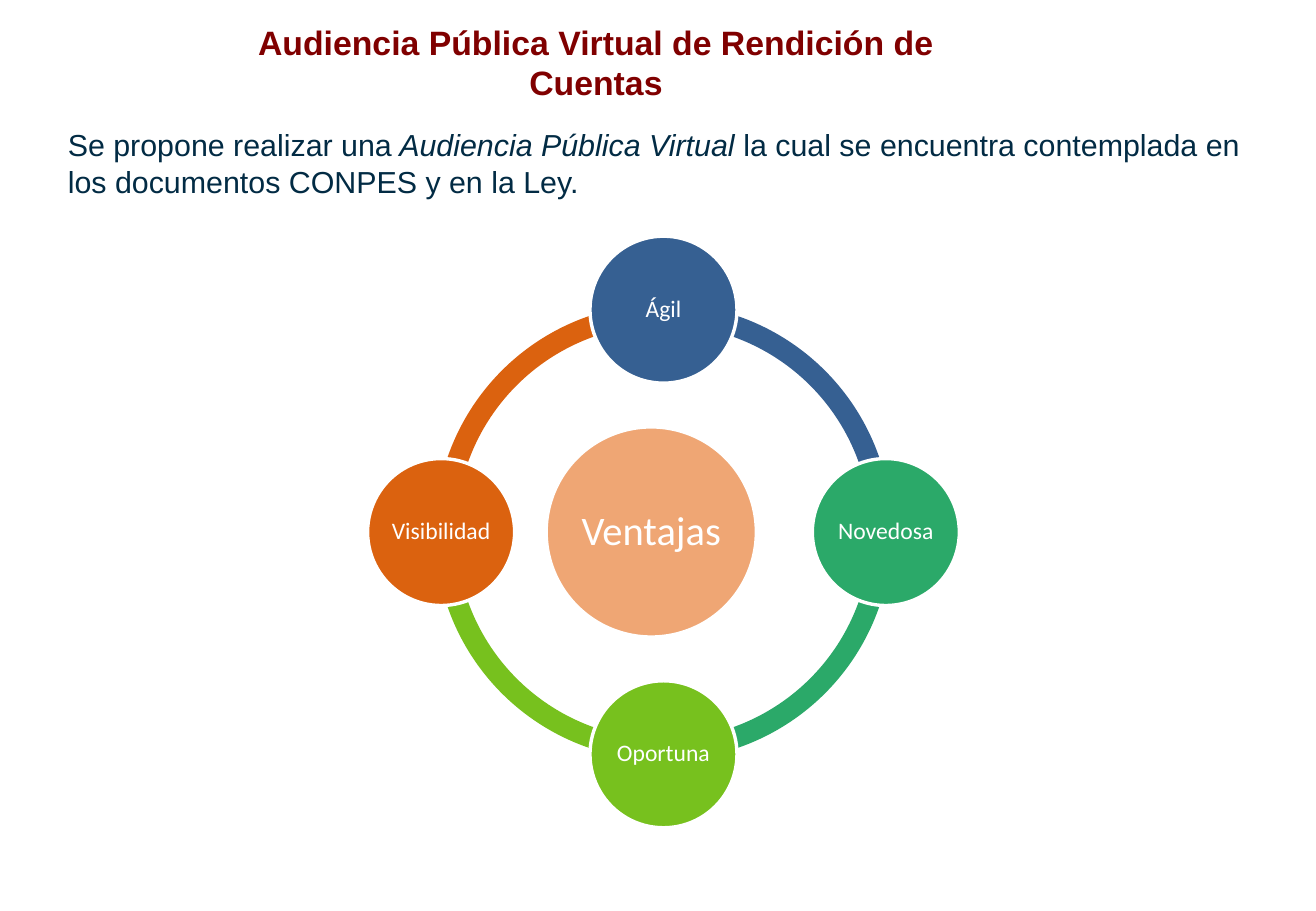
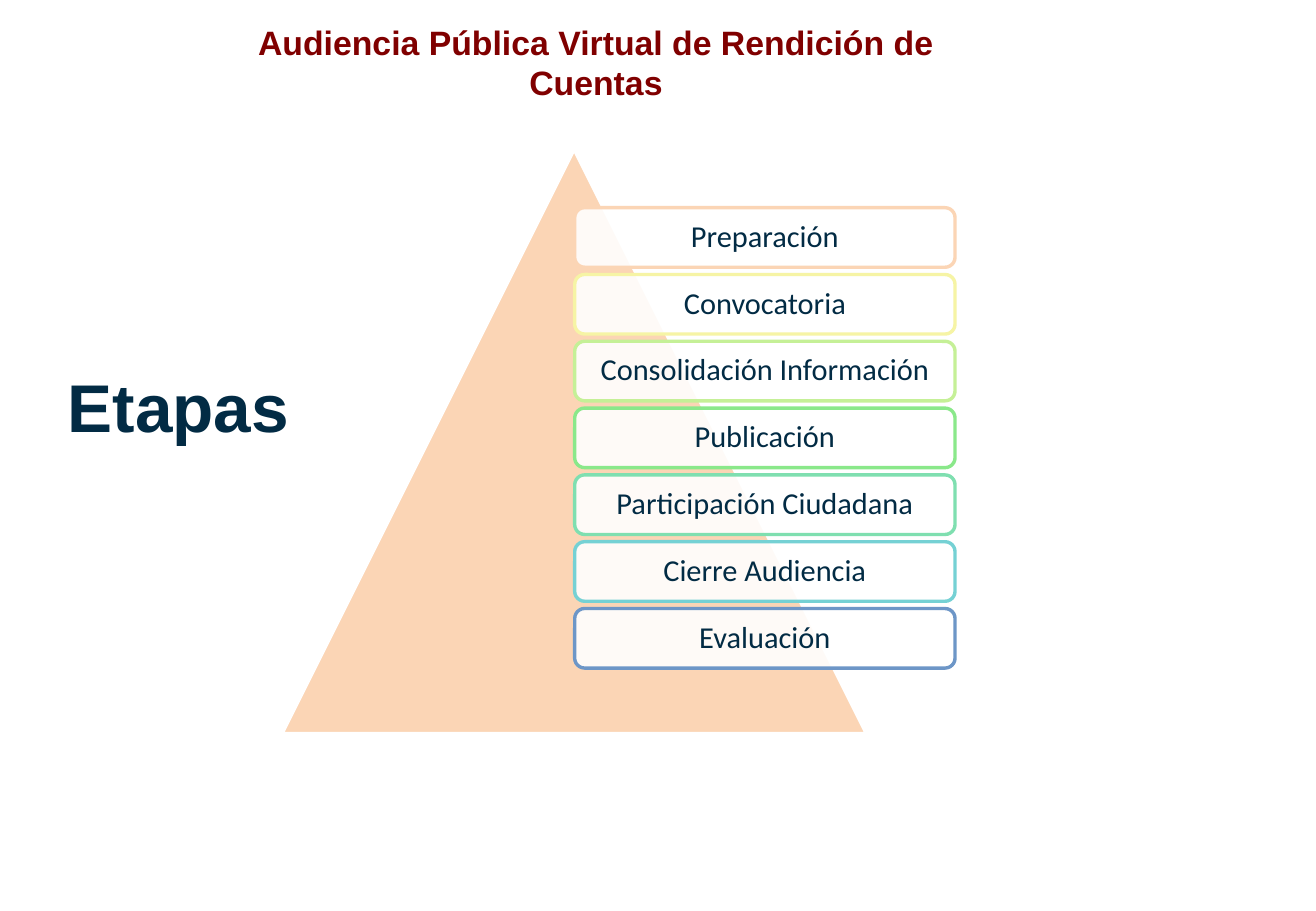
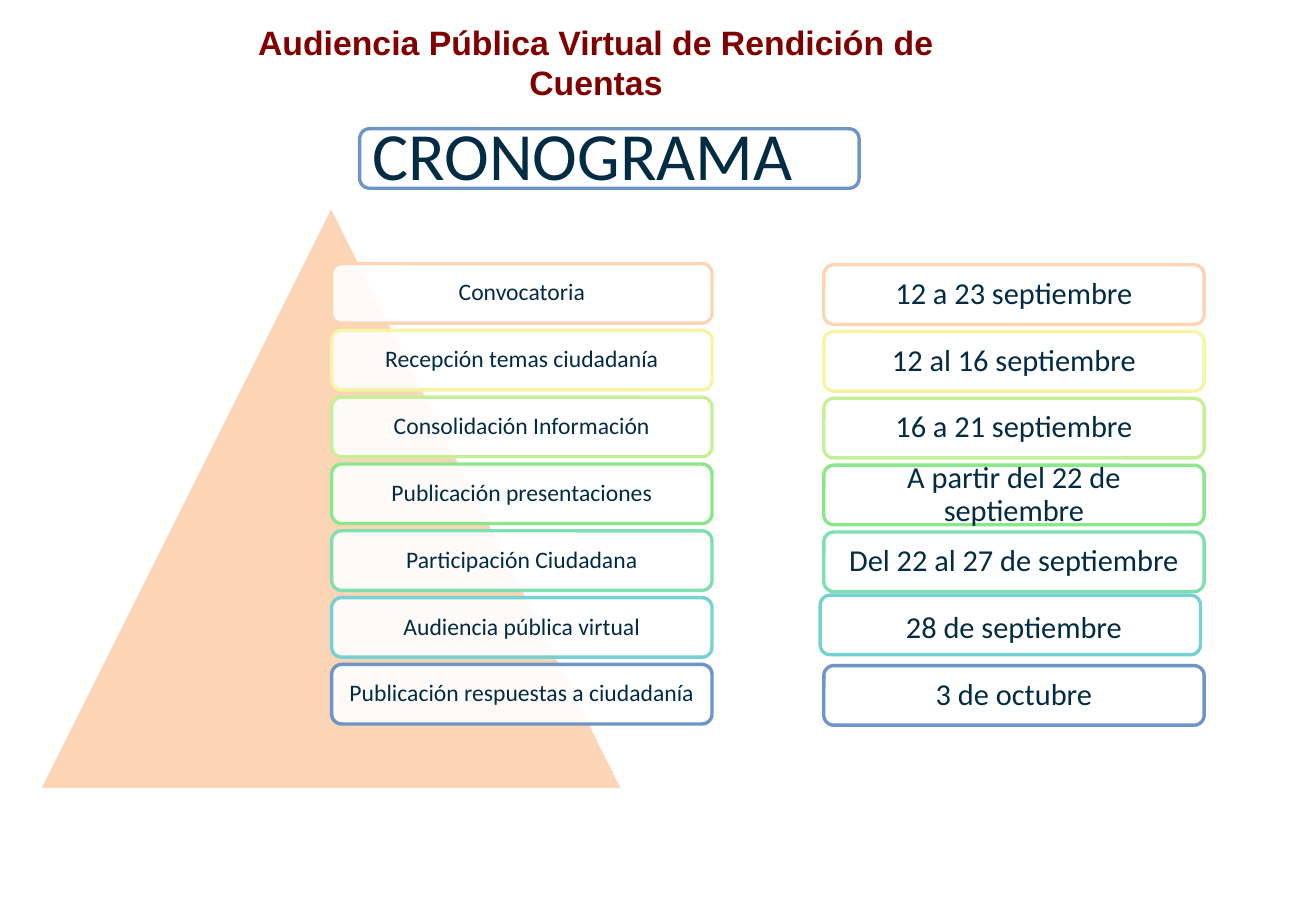
from math import cos, radians, sin

from lxml.etree import SubElement
from pptx import Presentation
from pptx.dml.color import RGBColor
from pptx.enum.shapes import MSO_SHAPE
from pptx.enum.text import MSO_ANCHOR, MSO_AUTO_SIZE, PP_ALIGN
from pptx.oxml.ns import qn
from pptx.util import Inches, Pt

# Colours
WHITE = RGBColor(0xFF, 0xFF, 0xFF)
MAROON = RGBColor(0x80, 0x00, 0x00)
NAVY = RGBColor(0x02, 0x2B, 0x44)
BLUE = RGBColor(0x36, 0x60, 0x92)
GREEN = RGBColor(0x2B, 0xA9, 0x69)
LIME = RGBColor(0x77, 0xC1, 0x1E)
ORANGE = RGBColor(0xDB, 0x62, 0x0F)
SALMON = RGBColor(0xEF, 0xA6, 0x74)
PEACH = RGBColor(0xFB, 0xD5, 0xB5)
STAGE_COLOURS = [
    PEACH,
    RGBColor(0xF6, 0xF4, 0xA5),
    RGBColor(0xC5, 0xF0, 0x97),
    RGBColor(0x8A, 0xE8, 0x8A),
    RGBColor(0x7F, 0xDF, 0xB0),
    RGBColor(0x75, 0xD1, 0xD4),
    RGBColor(0x6D, 0x96, 0xC7),
]

TITLE = "Audiencia Pública Virtual de Rendición de Cuentas"

# Stage boxes, in inches
STAGE_WIDTH, STAGE_HEIGHT, STAGE_STEP = 3.13, 0.49, 0.55


def style(paragraph, size, colour, font="Calibri", bold=False):
    paragraph.font.size = Pt(size)
    paragraph.font.name = font
    paragraph.font.bold = bold
    paragraph.font.color.rgb = colour


def add_text(slide, left, top, width, height, lines, size, colour=NAVY,
             bold=False, wrap=False, align=PP_ALIGN.LEFT):
    """Each line is a list of (text, italic) runs."""
    box = slide.shapes.add_textbox(Inches(left), Inches(top), Inches(width), Inches(height))
    frame = box.text_frame
    frame.word_wrap = wrap
    frame.auto_size = MSO_AUTO_SIZE.SHAPE_TO_FIT_TEXT
    for index, runs in enumerate(lines):
        paragraph = frame.add_paragraph() if index else frame.paragraphs[0]
        paragraph.alignment = align
        style(paragraph, size, colour, "Arial", bold)
        for text, italic in runs:
            run = paragraph.add_run()
            run.text = text
            if italic:
                run.font.italic = True


def add_figure(slide, kind, left, top, width, height, fill, line=WHITE):
    figure = slide.shapes.add_shape(
        kind, Inches(left), Inches(top), Inches(width), Inches(height))
    figure.shadow.inherit = False
    figure.fill.solid()
    figure.fill.fore_color.rgb = fill
    if line is None:
        figure.line.fill.background()
    else:
        figure.line.color.rgb = line
        figure.line.width = Pt(2)
    return figure


def add_label(figure, text, size, colour, inset, wrap=True, shift=(0, 0)):
    """Centre text in a figure, moved by shift inches."""
    across, down = shift
    frame = figure.text_frame
    frame.word_wrap = wrap
    frame.vertical_anchor = MSO_ANCHOR.MIDDLE
    frame.margin_left = Inches(inset + max(2 * across, 0))
    frame.margin_right = Inches(inset + max(-2 * across, 0))
    frame.margin_top = Inches(inset + max(2 * down, 0))
    frame.margin_bottom = Inches(inset + max(-2 * down, 0))
    paragraph = frame.paragraphs[0]
    paragraph.text = text
    paragraph.alignment = PP_ALIGN.CENTER
    paragraph.line_spacing = 0.9
    style(paragraph, size, colour)


def add_circle(slide, centre_x, centre_y, diameter, text, size, fill):
    circle = add_figure(slide, MSO_SHAPE.OVAL, centre_x - diameter / 2,
                        centre_y - diameter / 2, diameter, diameter, fill)
    add_label(circle, text, size, WHITE, 0.02, wrap=False)


def add_stage(slide, left, top, text, colour, size=18, width=STAGE_WIDTH, shift=(0, 0)):
    stage = add_figure(slide, MSO_SHAPE.ROUNDED_RECTANGLE, left, top, width,
                       STAGE_HEIGHT, WHITE, colour)
    # Fill at 90 % opacity
    fill_colour = stage.fill._xPr.find(qn("a:solidFill"))[0]
    SubElement(fill_colour, qn("a:alpha")).set("val", "90000")
    add_label(stage, text, size, NAVY, 0.07, shift=shift)


def add_pyramid(slide, left, top, stages, size):
    add_figure(slide, MSO_SHAPE.ISOSCELES_TRIANGLE, left, top, 4.81, 4.81, PEACH)
    for row, (text, colour) in enumerate(zip(stages, STAGE_COLOURS)):
        add_stage(slide, left + 2.41, top + 0.48 + row * STAGE_STEP, text, colour, size)


def add_titled_slide(deck):
    slide = deck.slides.add_slide(deck.slide_layouts[6])
    add_text(slide, 1.48, 0.13, 6.85, 0.77, [[(TITLE, False)]], 20, MAROON,
             bold=True, wrap=True, align=PP_ALIGN.CENTER)
    return slide


def build_advantages(deck):
    slide = add_titled_slide(deck)
    add_text(slide, 0.46, 0.99, 9.94, 0.71, [
        [("Se propone realizar una", False),
         (" Audiencia Pública Virtual ", True),
         ("la cual se encuentra contemplada en", False)],
        [("los documentos CONPES y en la Ley.", False)],
    ], 18)

    # Ring of advantages, clockwise from the top
    centre_x, centre_y, ring, orbit = 5.46, 4.38, 3.76, 1.83
    advantages = [("Ágil", BLUE), ("Novedosa", GREEN), ("Oportuna", LIME), ("Visibilidad", ORANGE)]
    angles = [270, 0, 90, 180]
    for angle, (_, colour) in zip(angles, advantages):
        arc = add_figure(slide, MSO_SHAPE.BLOCK_ARC, centre_x - ring / 2,
                         centre_y - ring / 2, ring, ring, colour, line=None)
        # Angles are stored in 60000ths of a degree
        arc.adjustments[0] = angle * 0.6
        arc.adjustments[1] = (angle + 90) % 360 * 0.6
        arc.adjustments[2] = 0.046
    add_circle(slide, 5.36, centre_y, 1.73, "Ventajas", 24, SALMON)
    for angle, (name, colour) in zip(angles, advantages):
        add_circle(slide, centre_x + orbit * cos(radians(angle)),
                   centre_y + orbit * sin(radians(angle)), 1.21, name, 14, colour)


def build_stages(deck):
    slide = add_titled_slide(deck)
    add_text(slide, 0.46, 2.96, 2.04, 0.77, [[("Etapas", False)]], 40, bold=True)
    add_pyramid(slide, 2.32, 1.23, [
        "Preparación", "Convocatoria", "Consolidación Información", "Publicación",
        "Participación Ciudadana", "Cierre Audiencia", "Evaluación",
    ], 18)


def build_schedule(deck):
    slide = add_titled_slide(deck)
    add_stage(slide, 2.96, 1.06, "CRONOGRAMA", STAGE_COLOURS[-1], 40, 4.11, shift=(-0.22, 0))
    add_pyramid(slide, 0.32, 1.69, [
        "Convocatoria", "Recepción temas ciudadanía", "Consolidación Información",
        "Publicación presentaciones", "Participación Ciudadana",
        "Audiencia pública virtual", "Publicación respuestas a ciudadanía",
    ], 14)

    # Dates; the hearing's box sits slightly up and to the left of its text
    dates = [
        "12 a 23 septiembre", "12 al 16 septiembre", "16 a 21 septiembre",
        "A partir del 22 de septiembre", "Del 22 al 27 de septiembre",
        "28 de septiembre", "3 de octubre",
    ]
    hearing_row = 5
    for row, (date, colour) in enumerate(zip(dates, STAGE_COLOURS)):
        across, down = (0.03, 0.03) if row == hearing_row else (0, 0)
        add_stage(slide, 6.78 - across, 2.18 + row * STAGE_STEP - down, date, colour,
                  shift=(across, down))


def main():
    deck = Presentation()
    deck.slide_width = Inches(10.83)
    deck.slide_height = Inches(7.5)
    build_advantages(deck)
    build_stages(deck)
    build_schedule(deck)
    deck.save("out.pptx")


if __name__ == "__main__":
    main()
